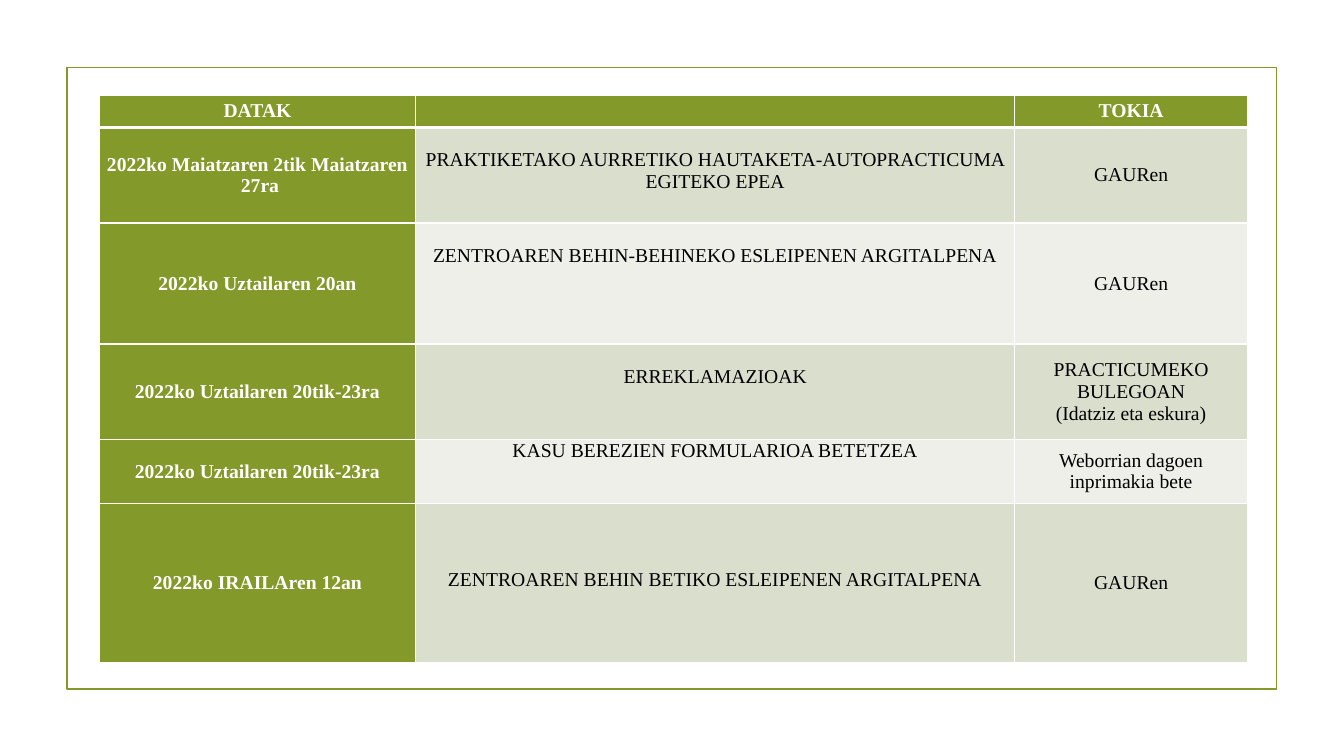
from lxml.etree import SubElement
from pptx import Presentation
from pptx.dml.color import RGBColor
from pptx.enum.shapes import MSO_SHAPE as Shape
from pptx.enum.text import MSO_ANCHOR as Anchor, PP_ALIGN as Align
from pptx.oxml.ns import qn
from pptx.util import Cm, Pt

COLORS = {"green": "83992A", "dark_band": "D9DECD", "light_band": "EDEFE8",
          "white": "FFFFFF", "black": "000000"}
FONT = "Times New Roman"
COLUMN_WIDTHS = [7.98, 15.09, 5.87]
HEADER = ["DATAK", "", "TOKIA"]
HEADER_HEIGHT = 0.81
LINE_HEIGHT = 0.55
SCHEDULE = [
    (2.41, 1, "2022ko Maiatzaren 2tik Maiatzaren  27ra",
     "PRAKTIKETAKO AURRETIKO HAUTAKETA-AUTOPRACTICUMA EGITEKO EPEA", "GAURen"),
    (3.05, 1, "2022ko Uztailaren 20an",
     "ZENTROAREN BEHIN-BEHINEKO ESLEIPENEN ARGITALPENA", "GAURen"),
    (2.41, 1, "2022ko Uztailaren 20tik-23ra", "ERREKLAMAZIOAK",
     "PRACTICUMEKO BULEGOAN\n(Idatziz eta eskura)"),
    (1.6, 0, "2022ko Uztailaren 20tik-23ra",
     "KASU BEREZIEN FORMULARIOA BETETZEA", "Weborrian dagoen inprimakia bete"),
    (4.01, 3, "2022ko IRAILAren 12an",
     "ZENTROAREN BEHIN BETIKO ESLEIPENEN ARGITALPENA", "GAURen"),
]


def rgb(name):
    """Return the palette colour with the given name."""
    return RGBColor.from_string(COLORS[name])


def write_text(text_frame, text, size=14, color="black", bold=False, align=Align.CENTER):
    """Write one paragraph per line of text in the given format."""
    for index, line in enumerate(text.split("\n")):
        paragraph = text_frame.paragraphs[0] if index == 0 else text_frame.add_paragraph()
        paragraph.alignment = align
        if line:
            run = paragraph.add_run()
            run.text = line
            run.font.name = FONT
            run.font.size = Pt(size)
            run.font.bold = bold
            run.font.color.rgb = rgb(color)


def set_borders(cell, top=1, bottom=1):
    """Draw white borders around a cell, with widths in points."""
    properties = cell._tc.get_or_add_tcPr()
    for tag, width in (("a:lnL", 1), ("a:lnR", 1), ("a:lnT", top), ("a:lnB", bottom)):
        line = SubElement(properties, qn(tag), w=str(Pt(width)))
        fill = SubElement(line, qn("a:solidFill"))
        SubElement(fill, qn("a:srgbClr"), val=COLORS["white"])


def format_cell(cell, text, fill, top=1, bottom=1, **text_format):
    """Give a cell its borders, fill, margins and text."""
    set_borders(cell, top, bottom)
    cell.fill.solid()
    cell.fill.fore_color.rgb = rgb(fill)
    cell.margin_left = cell.margin_right = Cm(0.18)
    cell.margin_top = cell.margin_bottom = 0
    cell.vertical_anchor = Anchor.MIDDLE
    write_text(cell.text_frame, text, **text_format)


def add_frame(slide, left, top, width, height):
    """Draw the green outline around the slide content."""
    frame = slide.shapes.add_shape(Shape.RECTANGLE, Cm(left), Cm(top), Cm(width), Cm(height))
    frame.shadow.inherit = False
    frame.fill.background()
    frame.line.color.rgb = rgb("green")
    frame.line.width = Pt(1.25)


def add_schedule(slide, left, top):
    """Place the table of dates, steps and places."""
    heights = [HEADER_HEIGHT] + [row[0] for row in SCHEDULE]
    table = slide.shapes.add_table(
        len(heights), len(COLUMN_WIDTHS), Cm(left), Cm(top),
        Cm(sum(COLUMN_WIDTHS)), Cm(sum(heights))).table
    table.horz_banding = False
    for column, width in zip(table.columns, COLUMN_WIDTHS):
        column.width = Cm(width)
    for row, height in zip(table.rows, heights):
        row.height = Cm(height)
    for column, title in enumerate(HEADER):
        format_cell(table.cell(0, column), title, "green", bottom=3, color="white", bold=True)
    for row, (_, lines_above, date, step, place) in enumerate(SCHEDULE, start=1):
        band = "dark_band" if row % 2 else "light_band"
        top_border = 3 if row == 1 else 1
        format_cell(table.cell(row, 0), date, "green", top=top_border, color="white", bold=True)
        format_cell(table.cell(row, 1), step, band, top=top_border)
        format_cell(table.cell(row, 2), place, band, top=top_border)
        table.cell(row, 1).vertical_anchor = Anchor.TOP
        table.cell(row, 1).margin_top = Cm(lines_above * LINE_HEIGHT)


def main():
    """Build and save the presentation."""
    presentation = Presentation()
    presentation.slide_width = Cm(33.87)
    presentation.slide_height = Cm(19.05)
    slide = presentation.slides.add_slide(presentation.slide_layouts[6])
    add_frame(slide, 1.69, 1.7, 30.48, 15.67)
    add_schedule(slide, 2.5, 2.4)
    presentation.save("out.pptx")


if __name__ == "__main__":
    main()
